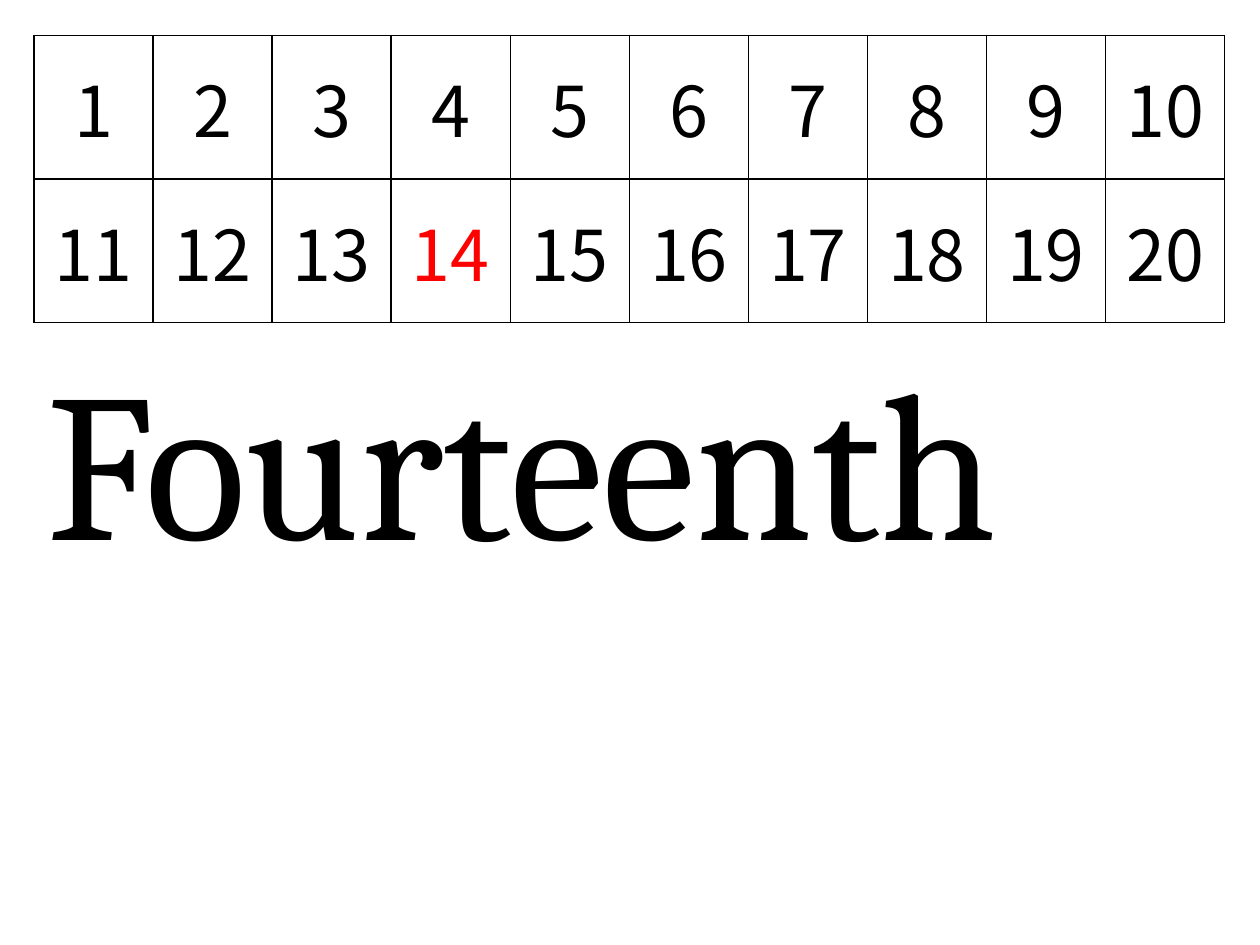
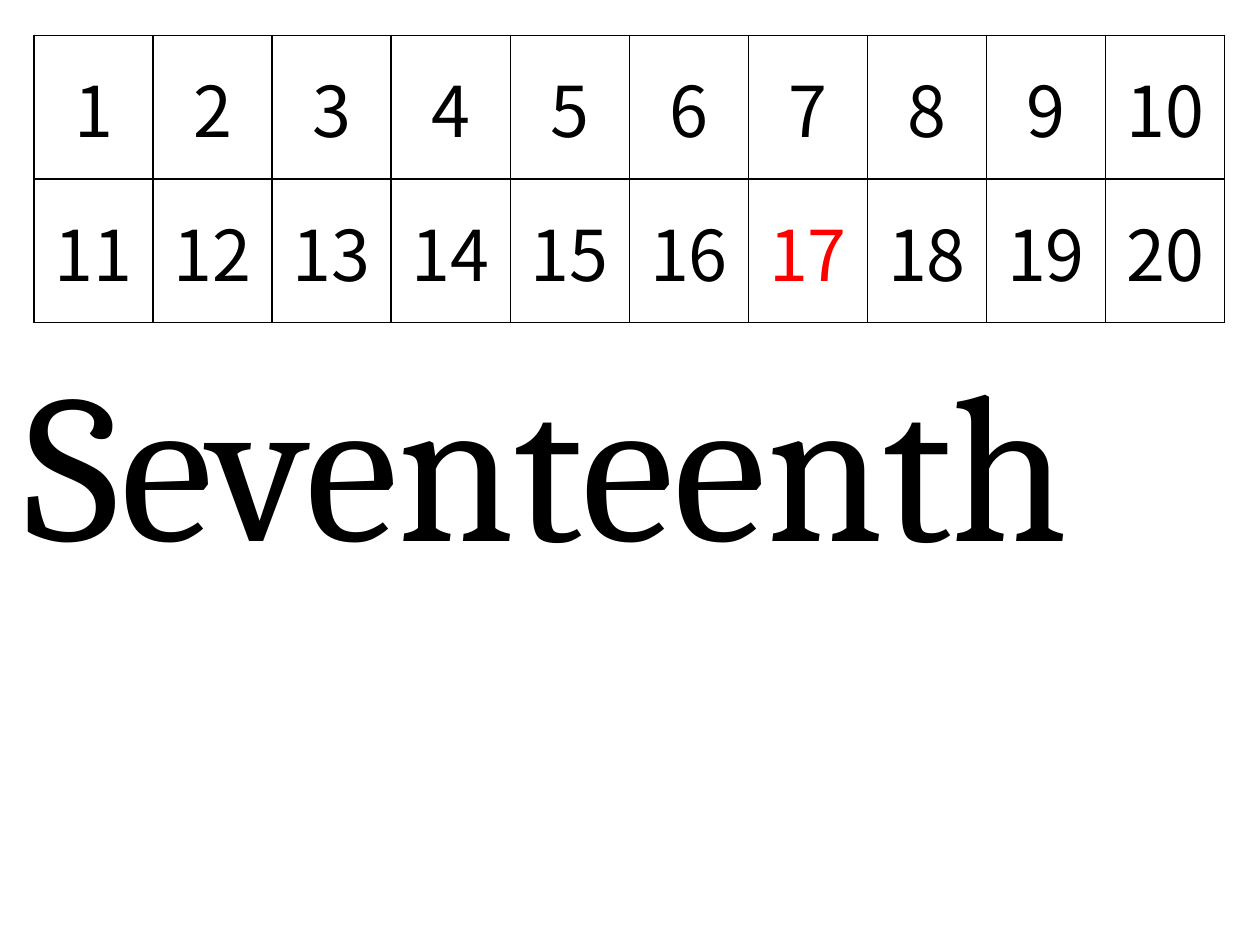
from lxml import etree
from pptx import Presentation
from pptx.dml.color import RGBColor
from pptx.enum.text import MSO_ANCHOR, MSO_AUTO_SIZE, PP_ALIGN
from pptx.oxml.ns import qn
from pptx.util import Inches, Pt

CENTER = PP_ALIGN.CENTER
MIDDLE = MSO_ANCHOR.MIDDLE
FIT_SHAPE = MSO_AUTO_SIZE.SHAPE_TO_FIT_TEXT

# Shared look
BLACK, RED = "000000", "FF0000"
NUMBER_FONT, WORD_FONT = "Noto Sans CJK JP", "Cambria"
BLANK_LAYOUT = 6
ROWS, COLUMNS = 2, 10
GRID_LEFT, GRID_TOP, GRID_WIDTH, GRID_HEIGHT = 0.27, 0.28, 9.45, 2.28

# Highlighted number, ordinal word, and the word's box (left, top, width, height)
ORDINALS = [
    (14, "Fourteenth", (0.27, 2.57, 8.99, 2.12)),
    (17, "Seventeenth", (0.1, 2.58, 9.93, 2.12)),
]


def rgb(color):
    return RGBColor.from_string(color)


def add_span(para, text, size, font, color):
    span = para.add_run()
    span.text = text
    span.font.size = Pt(size)
    span.font.name = font
    span.font.color.rgb = rgb(color)


def set_borders(cell, color, width):
    properties = cell._tc.get_or_add_tcPr()
    # Border lines come before the fill, in schema order
    for position, side in enumerate(("lnL", "lnR", "lnT", "lnB")):
        line = etree.Element(qn(f"a:{side}"), w=str(Pt(width)))
        fill = etree.SubElement(line, qn("a:solidFill"))
        etree.SubElement(fill, qn("a:srgbClr"), val=color)
        properties.insert(position, line)


def add_number_grid(page, highlighted):
    frame = page.shapes.add_table(
        ROWS, COLUMNS, Inches(GRID_LEFT), Inches(GRID_TOP),
        Inches(GRID_WIDTH), Inches(GRID_HEIGHT))
    table = frame.table
    table.first_row = False
    table.horz_banding = False
    for number, cell in enumerate(table.iter_cells(), start=1):
        cell.fill.background()
        set_borders(cell, BLACK, 1)
        cell.vertical_anchor = MIDDLE
        para = cell.text_frame.paragraphs[0]
        para.alignment = CENTER
        color = RED if number == highlighted else BLACK
        add_span(para, str(number), 40, NUMBER_FONT, color)


def add_word(page, word, place):
    box = page.shapes.add_textbox(*map(Inches, place))
    box.text_frame.word_wrap = False
    box.text_frame.auto_size = FIT_SHAPE
    add_span(box.text_frame.paragraphs[0], word, 120, WORD_FONT, BLACK)


def main():
    deck = Presentation()
    deck.slide_width = Inches(10)
    deck.slide_height = Inches(7.5)
    for number, word, place in ORDINALS:
        page = deck.slides.add_slide(deck.slide_layouts[BLANK_LAYOUT])
        add_number_grid(page, number)
        add_word(page, word, place)
    deck.save("out.pptx")


if __name__ == "__main__":
    main()
